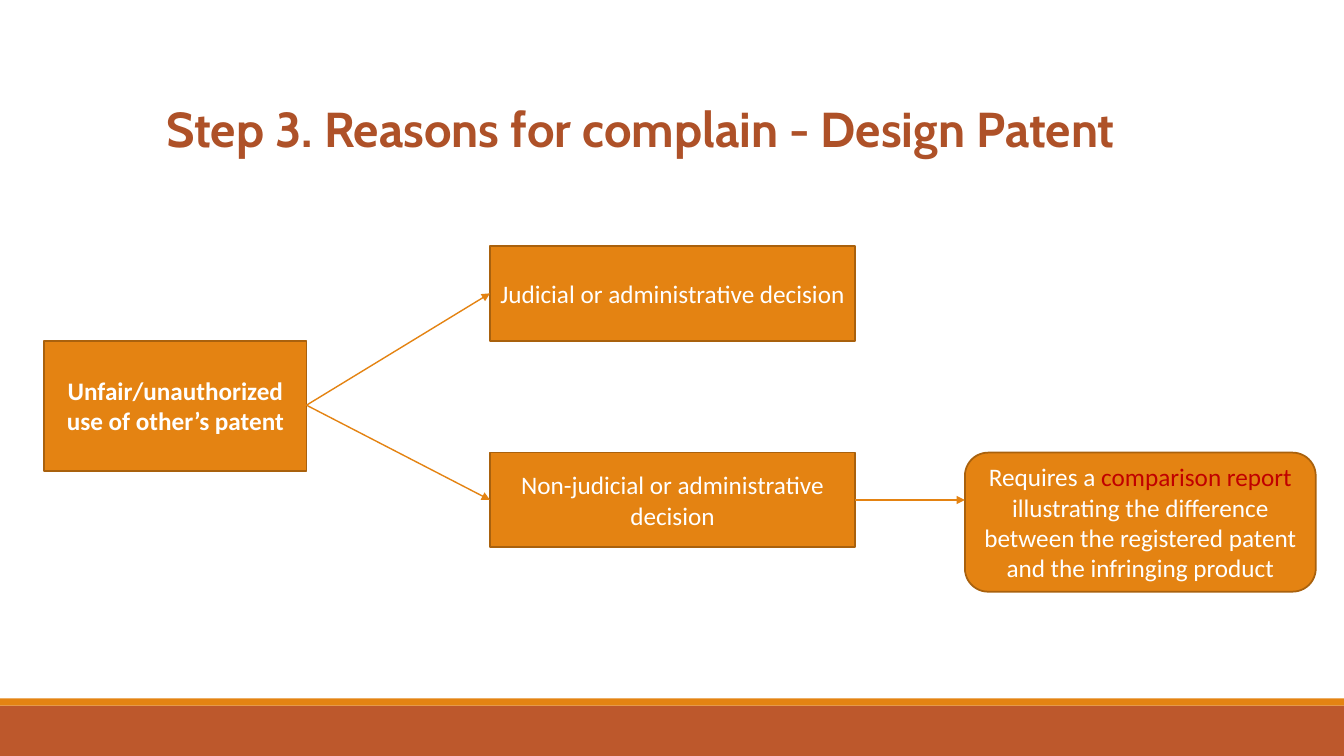
from dataclasses import dataclass

from lxml.etree import SubElement
from pptx import Presentation
from pptx.dml.color import RGBColor
from pptx.enum.shapes import MSO_CONNECTOR, MSO_SHAPE
from pptx.enum.text import MSO_ANCHOR, PP_ALIGN
from pptx.oxml.ns import qn
from pptx.slide import Slide
from pptx.text.text import TextFrame
from pptx.util import Emu, Pt

SCALE = 9144  # EMU in one px, 100 px to the inch
WIDTH, HEIGHT = 1333, 750
COLORS = {
    "white": "FFFFFF",
    "orange": "E48312",
    "edge": "A9610D",
    "rust": "BD582C",
    "title": "AE5128",
    "red": "C00000",
}


@dataclass(frozen=True)
class Run:
    text: str
    color: str = "white"
    bold: bool = False
    size: int = 18
    font: str = "Calibri"


@dataclass(frozen=True)
class Box:
    left: int
    top: int
    width: int
    height: int
    runs: tuple[Run, ...] = ()
    kind: MSO_SHAPE = MSO_SHAPE.RECTANGLE
    fill: str = "orange"
    edge: str | None = "edge"

    @property
    def right(self) -> int:
        return self.left + self.width

    @property
    def middle(self) -> int:
        return self.top + self.height // 2


@dataclass(frozen=True)
class Arrow:
    start: Box
    end: Box
    level: bool = False


# Footer bands
BANDS = (
    Box(0, 700, WIDTH, 50, fill="rust", edge=None),
    Box(0, 693, WIDTH, 7, edge=None),
)

# Boxes of the decision tree
CAUSE = Box(44, 338, 260, 129,
            (Run("Unfair/unauthorized use of other’s patent", bold=True),))
COURT = Box(486, 244, 362, 94, (Run("Judicial or administrative decision"),))
OTHER = Box(486, 449, 362, 94,
            (Run("Non-judicial or administrative decision"),))
REPORT = Box(957, 449, 348, 138, (
    Run("Requires a "),
    Run("comparison report ", "red"),
    Run("illustrating the difference between the registered patent "
        "and the infringing product"),
), MSO_SHAPE.ROUNDED_RECTANGLE)
ARROWS = (
    Arrow(CAUSE, COURT),
    Arrow(CAUSE, OTHER),
    Arrow(OTHER, REPORT, level=True),
)
TITLE = Run("Step 3. Reasons for complain - Design Patent",
            "title", True, 35, "Cabin")


def px(value: int) -> Emu:
    return Emu(value * SCALE)


def rgb(name: str) -> RGBColor:
    return RGBColor.from_string(COLORS[name])


def write(frame: TextFrame, runs: tuple[Run, ...], align: PP_ALIGN) -> None:
    frame.word_wrap = True
    para = frame.paragraphs[0]
    para.alignment = align
    for item in runs:
        run = para.add_run()
        run.text = item.text
        run.font.name = item.font
        run.font.size = Pt(item.size)
        run.font.bold = item.bold
        run.font.color.rgb = rgb(item.color)


def draw_box(slide: Slide, box: Box) -> None:
    shape = slide.shapes.add_shape(box.kind, px(box.left), px(box.top),
                                   px(box.width), px(box.height))
    shape.shadow.inherit = False
    shape.fill.solid()
    shape.fill.fore_color.rgb = rgb(box.fill)
    if box.edge:
        shape.line.color.rgb = rgb(box.edge)
        shape.line.width = Pt(1.25)
    else:
        shape.line.fill.background()
    if box.runs:
        shape.text_frame.vertical_anchor = MSO_ANCHOR.MIDDLE
        write(shape.text_frame, box.runs, PP_ALIGN.CENTER)


def draw_arrow(slide: Slide, arrow: Arrow) -> None:
    start, end = arrow.start, arrow.end
    target = start.middle if arrow.level else end.middle
    line = slide.shapes.add_connector(
        MSO_CONNECTOR.STRAIGHT, px(start.right), px(start.middle),
        px(end.left), px(target))
    line.line.color.rgb = rgb("orange")
    line.line.width = Pt(1)
    # Arrowhead and no shadow
    SubElement(line.line._get_or_add_ln(), qn("a:tailEnd"), type="triangle")
    SubElement(line._element.spPr, qn("a:effectLst"))


def draw_title(slide: Slide) -> None:
    box = slide.shapes.add_textbox(px(155), px(93), px(1079), px(69))
    write(box.text_frame, (TITLE,), PP_ALIGN.LEFT)


def main() -> None:
    deck = Presentation()
    deck.slide_width, deck.slide_height = px(WIDTH), px(HEIGHT)
    slide = deck.slides.add_slide(deck.slide_layouts[6])
    for box in (*BANDS, CAUSE, COURT, OTHER, REPORT):
        draw_box(slide, box)
    for arrow in ARROWS:
        draw_arrow(slide, arrow)
    draw_title(slide)
    deck.save("out.pptx")


if __name__ == "__main__":
    main()
